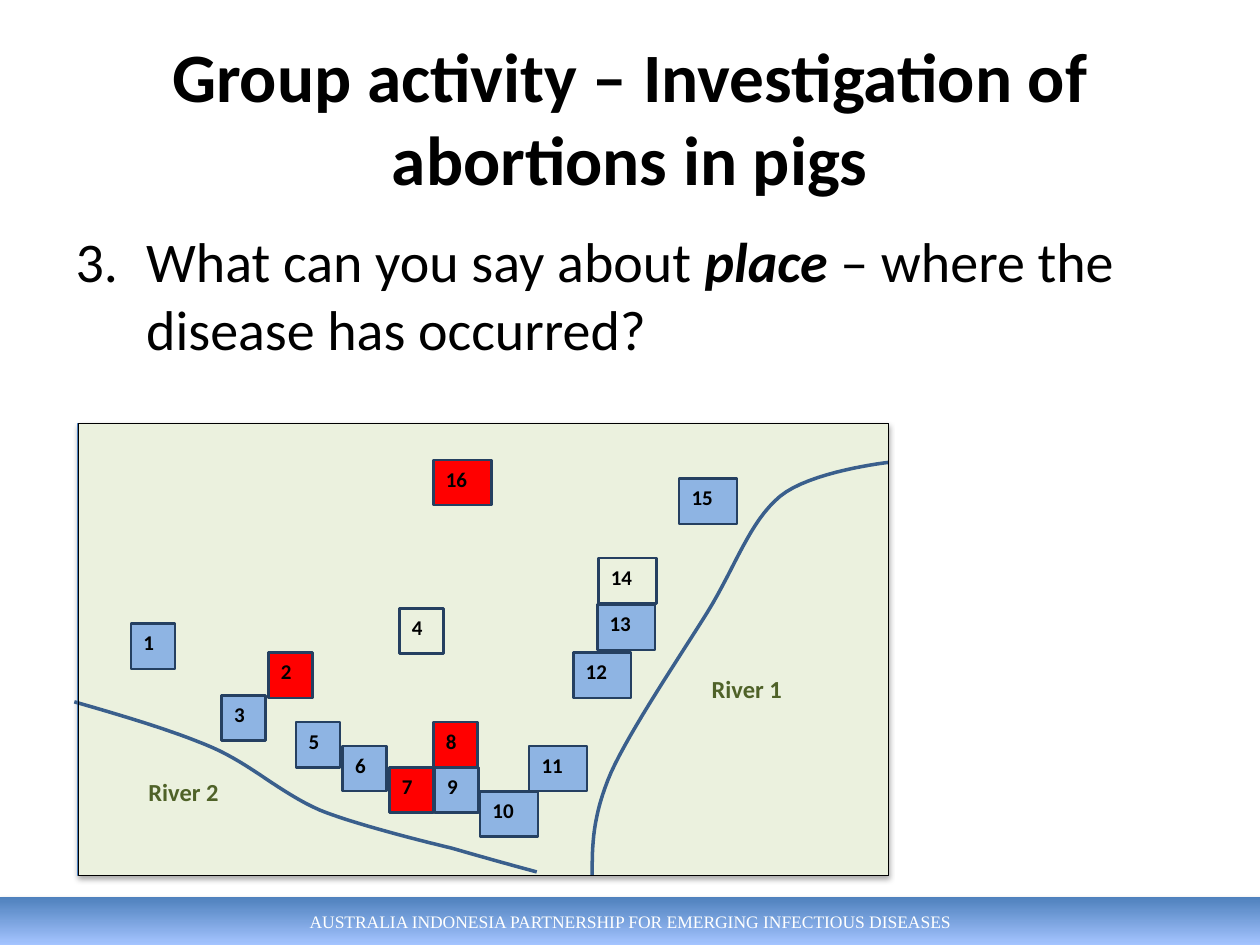
from lxml import etree
from pptx import Presentation
from pptx.dml.color import RGBColor
from pptx.enum.shapes import MSO_SHAPE
from pptx.enum.text import MSO_ANCHOR, PP_ALIGN
from pptx.oxml import parse_xml
from pptx.oxml.ns import nsdecls, qn
from pptx.util import Inches, Pt

RECT = MSO_SHAPE.RECTANGLE
MIDDLE, TOP = MSO_ANCHOR.MIDDLE, MSO_ANCHOR.TOP
LEFT, CENTER = PP_ALIGN.LEFT, PP_ALIGN.CENTER
BLUE, RED, NAVY, BLACK = "8EB4E3", "FF0000", "254061", "000000"
FIELD = (0.62, 3.36, 6.43, 3.59)


def rgb(code):
    return RGBColor.from_string(code)


def box(x, y, w, h, fill=None, line=None, width=1.5):
    """Add a rectangle; without a fill or line colour that part is clear."""
    shape = slide.shapes.add_shape(RECT, Inches(x), Inches(y), Inches(w), Inches(h))
    shape.shadow.inherit = False
    if fill:
        shape.fill.solid()
        shape.fill.fore_color.rgb = rgb(fill)
    else:
        shape.fill.background()
    if line:
        shape.line.color.rgb = rgb(line)
        shape.line.width = Pt(width)
    else:
        shape.line.fill.background()
    return shape


prs = Presentation()
prs.slide_width, prs.slide_height = Inches(10), Inches(7.5)
slide = prs.slides.add_slide(prs.slide_layouts[1])

# Title and question
title, body = slide.placeholders
for holder, y, h in ((title, 0.3, 1.25), (body, 1.75, 4.95)):
    holder.left, holder.top = Inches(0.5), Inches(y)
    holder.width, holder.height = Inches(9), Inches(h)

title.text_frame.text = "Group activity – Investigation of abortions in pigs"
title.text_frame.vertical_anchor = MIDDLE
head = title.text_frame.paragraphs[0]
head.alignment = CENTER
font = head.runs[0].font
font.name, font.size, font.bold = "Calibri", Pt(39.6), True
font.color.rgb = rgb(BLACK)

ask = body.text_frame.paragraphs[0]
ask.space_before = Pt(0)
props = ask._p.get_or_add_pPr()
props.set("marL", str(Inches(0.56)))
props.set("indent", str(Inches(-0.56)))
etree.SubElement(props, qn("a:buFont"), typeface="+mj-lt")
etree.SubElement(props, qn("a:buAutoNum"), type="arabicPeriod", startAt="3")
for text, strong in (("What can you say about ", False), ("place", True),
                     (" – where the disease has occurred?", False)):
    run = ask.add_run()
    run.text = text
    run.font.name, run.font.size = "Calibri", Pt(32)
    run.font.bold = run.font.italic = strong
    run.font.color.rgb = rgb(BLACK)

# Footer band and map field, both with a soft shadow
band = box(0, 7.12, 10, 0.38)
band.fill.gradient()
band.fill.gradient_angle = 270
for stop, code in zip(band.fill.gradient_stops, ("4F81BD", "A4C4FF")):
    stop.color.rgb = rgb(code)
band.text_frame.text = "AUSTRALIA INDONESIA PARTNERSHIP FOR EMERGING INFECTIOUS DISEASES"
band.text_frame.vertical_anchor = MIDDLE
foot = band.text_frame.paragraphs[0]
foot.alignment = CENTER
font = foot.runs[0].font
font.name, font.size = "Times New Roman", Pt(10)
font.color.rgb = rgb("FFFFFF")

field = box(*FIELD, "EBF1DE", "4B7EBC", 0.75)
for shape in (band, field):
    shape._element.spPr.find(qn("a:effectLst")).append(parse_xml(
        f'<a:outerShdw {nsdecls("a")} blurRad="{Pt(3.1)}" dist="{Pt(1.8)}" '
        'dir="5400000" rotWithShape="0"><a:srgbClr val="000000">'
        '<a:alpha val="35000"/></a:srgbClr></a:outerShdw>'))

# Farms: number, left, top, fill
farms = [
    (1, 1.04, 4.95, BLUE), (2, 2.13, 5.18, RED), (3, 1.76, 5.52, BLUE),
    (5, 2.35, 5.73, BLUE), (6, 2.72, 5.92, BLUE), (7, 3.09, 6.09, RED),
    (8, 3.44, 5.73, RED), (9, 3.45, 6.09, BLUE), (10, 3.81, 6.28, BLUE),
    (11, 4.2, 5.92, BLUE), (12, 4.55, 5.18, BLUE), (13, 4.74, 4.8, BLUE),
    (14, 4.75, 4.43, None), (15, 5.39, 3.8, BLUE), (16, 3.44, 3.65, RED),
    (4, 3.17, 4.83, None),
]
labels = []
for num, x, y, fill in farms:
    farm = box(x, y, 0.35 if num < 10 else 0.46, 0.36, fill, NAVY)
    labels.append((farm, str(num), 12, BLACK))

# Rivers: a start point, then Bezier curves of two controls and an end
rivers = [
    [(0.59, 5.57),
     (0.97, 5.68), (1.35, 5.79), (1.68, 5.93),
     (2, 6.07), (2.22, 6.29), (2.54, 6.43),
     (2.86, 6.56), (3.58, 6.73), (3.58, 6.73),
     (3.79, 6.79), (4, 6.85), (4.26, 6.92)],
    [(4.7, 6.95),
     (4.7, 6.71), (4.7, 6.48), (4.85, 6.13),
     (5.01, 5.78), (5.39, 5.22), (5.62, 4.85),
     (5.84, 4.49), (5.95, 4.14), (6.19, 3.94),
     (6.43, 3.74), (7.05, 3.67), (7.05, 3.67)],
]
STEPS = 16
for knots in rivers:
    points = []
    for i in range(0, len(knots) - 1, 3):
        for step in range(1, STEPS + 1):
            t = step / STEPS
            parts = ((1 - t) ** 3, 3 * t * (1 - t) ** 2, 3 * t * t * (1 - t), t ** 3)
            points.append([Inches(sum(p * k[axis] for p, k in zip(parts, knots[i:i + 4])))
                           for axis in (0, 1)])
    pen = slide.shapes.build_freeform(*map(Inches, knots[0]))
    pen.add_line_segments(points, close=False)
    river = pen.convert_to_shape()
    river.shadow.inherit = False
    river.fill.background()
    river.line.color.rgb = rgb("3A5F8C")
    river.line.width = Pt(2)

box(*FIELD, line=BLACK, width=0.25)
for name, x, y in (("River 1", 5.55, 5.3), ("River 2", 1.08, 6.12)):
    note = slide.shapes.add_textbox(Inches(x), Inches(y), Inches(0.94), Inches(0.4))
    labels.append((note, name, 14, "4F6228"))

for shape, text, size, code in labels:
    frame = shape.text_frame
    frame.text = text
    frame.word_wrap = False
    frame.vertical_anchor = TOP
    frame.paragraphs[0].alignment = LEFT
    font = frame.paragraphs[0].runs[0].font
    font.name, font.size, font.bold = "Calibri", Pt(size), True
    font.color.rgb = rgb(code)

prs.save("out.pptx")
